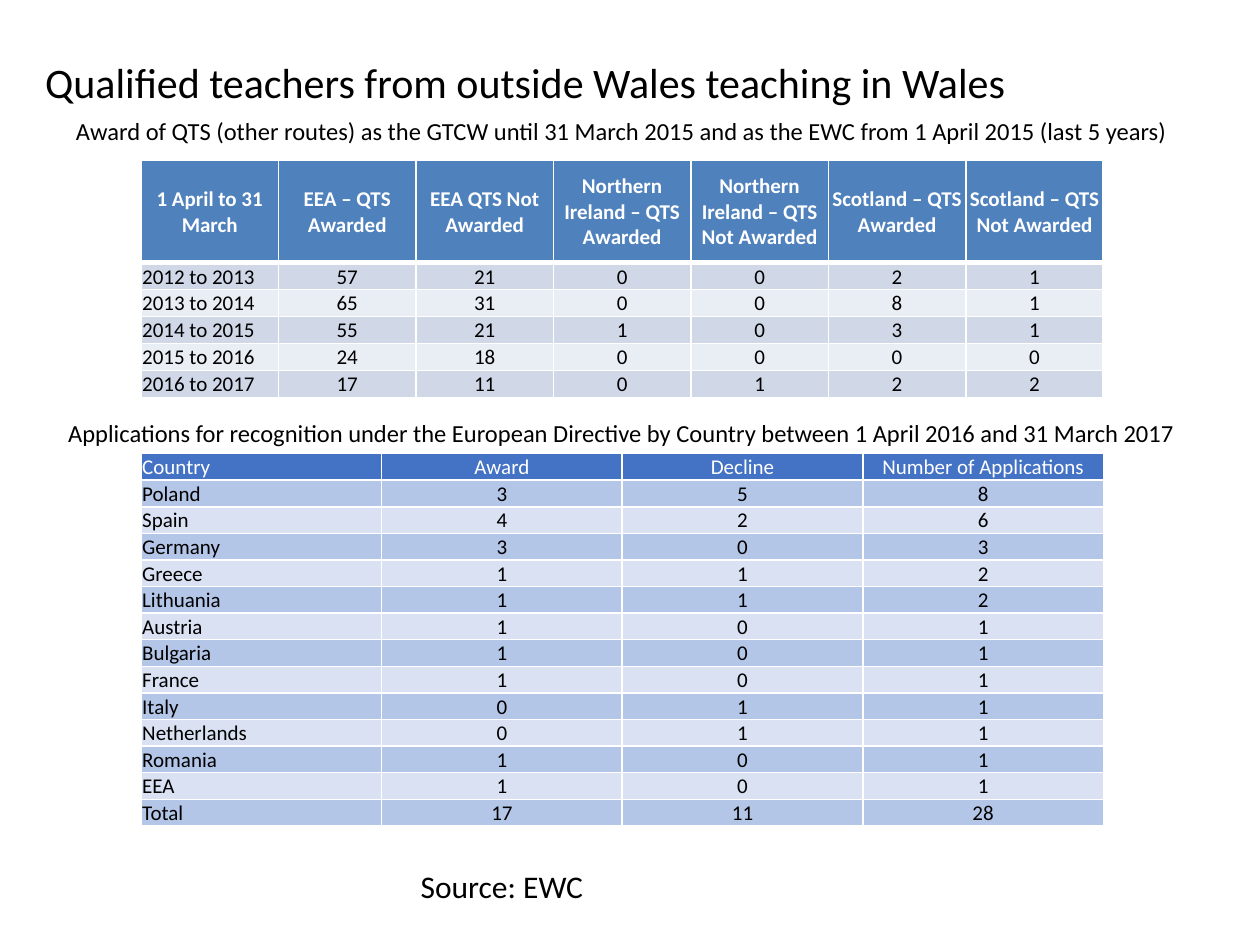
from lxml import etree
from pptx import Presentation
from pptx import util as u
from pptx.dml.color import RGBColor
from pptx.enum import text
from pptx.oxml import ns

FONT = "Calibri"
BLACK = RGBColor(0x00, 0x00, 0x00)
WHITE = RGBColor(0xFF, 0xFF, 0xFF)
STEEL_BLUE = RGBColor(0x4F, 0x81, 0xBD)
STEEL_BANDS = (RGBColor(0xD0, 0xD8, 0xE8), RGBColor(0xE9, 0xED, 0xF4))
ROYAL_BLUE = RGBColor(0x44, 0x72, 0xC4)
ROYAL_BANDS = (RGBColor(0xB4, 0xC6, 0xE7), RGBColor(0xD9, 0xE1, 0xF2))

TABLE_LEFT, TABLE_WIDTH = 80.6, 550

QTS_ROWS = [
    ("1 April to 31 March", "EEA – QTS Awarded", "EEA QTS Not Awarded",
     "Northern Ireland – QTS Awarded", "Northern Ireland – QTS Not Awarded",
     "Scotland – QTS Awarded", "Scotland – QTS Not Awarded"),
    ("2012 to 2013", 57, 21, 0, 0, 2, 1),
    ("2013 to 2014", 65, 31, 0, 0, 8, 1),
    ("2014 to 2015", 55, 21, 1, 0, 3, 1),
    ("2015 to 2016", 24, 18, 0, 0, 0, 0),
    ("2016 to 2017", 17, 11, 0, 1, 2, 2),
]
COUNTRY_ROWS = [
    ("Country", "Award", "Decline", "Number of Applications"),
    ("Poland", 3, 5, 8),
    ("Spain", 4, 2, 6),
    ("Germany", 3, 0, 3),
    ("Greece", 1, 1, 2),
    ("Lithuania", 1, 1, 2),
    ("Austria", 1, 0, 1),
    ("Bulgaria", 1, 0, 1),
    ("France", 1, 0, 1),
    ("Italy", 0, 1, 1),
    ("Netherlands", 0, 1, 1),
    ("Romania", 1, 0, 1),
    ("EEA", 1, 0, 1),
    ("Total", 17, 11, 28),
]


def style_paragraph(paragraph, size, color, centred, bold=False):
    paragraph.alignment = text.PP_ALIGN.CENTER if centred else text.PP_ALIGN.LEFT
    font = paragraph.font
    font.name, font.size, font.bold = FONT, u.Pt(size), bold
    font.color.rgb = color


def add_text(slide, words, left, top, width, height, size,
             centred=False, anchor=text.MSO_ANCHOR.TOP):
    box = slide.shapes.add_textbox(u.Pt(left), u.Pt(top), u.Pt(width), u.Pt(height))
    frame = box.text_frame
    frame.word_wrap = True
    frame.vertical_anchor = anchor
    frame.text = words
    style_paragraph(frame.paragraphs[0], size, BLACK, centred)


def set_borders(cell, top=1, bottom=1):
    """Draw white cell borders, with widths in points."""
    properties = cell._tc.get_or_add_tcPr()
    for side, width in (("L", 1), ("R", 1), ("T", top), ("B", bottom)):
        line = etree.SubElement(properties, ns.qn("a:ln" + side), w=str(u.Pt(width)))
        fill = etree.SubElement(line, ns.qn("a:solidFill"))
        etree.SubElement(fill, ns.qn("a:srgbClr"), val=str(WHITE))


def add_banded_table(slide, rows, top, header_height, row_height, header_fill,
                     bands, bold_header=False, header_rule=1, centre_corner=False):
    columns = len(rows[0])
    height = header_height + row_height * (len(rows) - 1)
    table = slide.shapes.add_table(len(rows), columns, u.Pt(TABLE_LEFT), u.Pt(top),
                                   u.Pt(TABLE_WIDTH), u.Pt(height)).table
    for column in table.columns:
        column.width = u.Pt(TABLE_WIDTH / columns)
    for i, values in enumerate(rows):
        is_header = i == 0
        table.rows[i].height = u.Pt(header_height if is_header else row_height)
        for j, value in enumerate(values):
            cell = table.cell(i, j)
            cell.text = str(value)
            cell.vertical_anchor = text.MSO_ANCHOR.MIDDLE
            cell.margin_left = cell.margin_right = cell.margin_top = u.Pt(0.7)
            cell.margin_bottom = 0
            set_borders(cell, top=header_rule if i == 1 else 1,
                        bottom=header_rule if is_header else 1)
            cell.fill.solid()
            cell.fill.fore_color.rgb = header_fill if is_header else bands[(i - 1) % 2]
            style_paragraph(cell.text_frame.paragraphs[0], 12,
                            WHITE if is_header else BLACK,
                            centred=j > 0 or (is_header and centre_corner),
                            bold=is_header and bold_header)


def main():
    presentation = Presentation()
    presentation.slide_width, presentation.slide_height = u.Pt(720), u.Pt(540)
    slide = presentation.slides.add_slide(presentation.slide_layouts[6])

    add_text(slide, "Qualified teachers from outside Wales teaching in Wales",
             18.7, 1.4, 648, 90, 24, anchor=text.MSO_ANCHOR.MIDDLE)
    add_text(slide, "Applications for recognition under the European Directive by Country "
             "between 1 April 2016 and 31 March 2017", 22.3, 235.4, 666, 24.5, 14, centred=True)
    add_text(slide, "Award of QTS (other routes) as the GTCW until 31 March 2015 and as the EWC "
             "from 1 April 2015 (last 5 years)", 22.3, 62.6, 666, 24.5, 14, centred=True)
    add_banded_table(slide, QTS_ROWS, 91.6, 58.6, 15.4, STEEL_BLUE, STEEL_BANDS,
                     bold_header=True, header_rule=3, centre_corner=True)
    add_banded_table(slide, COUNTRY_ROWS, 259.2, 15.2, 15.2, ROYAL_BLUE, ROYAL_BANDS)
    add_text(slide, "Source: EWC", 233.3, 491.8, 244, 29, 18)

    presentation.save("out.pptx")


if __name__ == "__main__":
    main()
